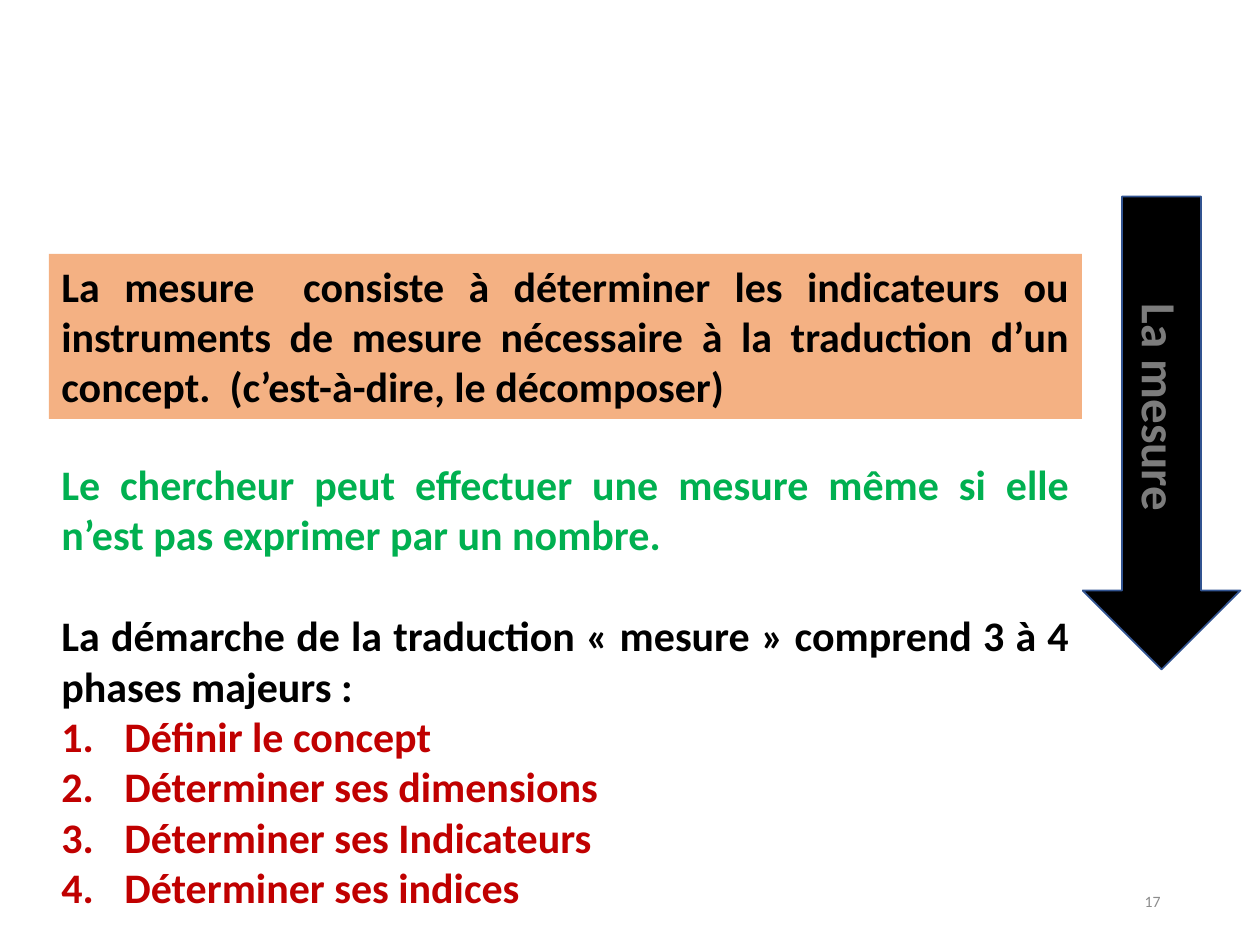
from dataclasses import dataclass

import pptx
import pptx.dml.color
import pptx.enum.shapes
import pptx.enum.text
import pptx.oxml.ns
import pptx.util
from lxml import etree

PX_PER_INCH = 126
FONT = "Calibri"
COLORS = {
    "black": "000000",
    "white": "FFFFFF",
    "peach": "F4B183",
    "green": "00B050",
    "red": "C00000",
    "blue": "325491",
    "label_gray": "7C7C7C",
    "number_gray": "8C8C8C",
}
ALIGN = pptx.enum.text.PP_ALIGN
ANCHOR = pptx.enum.text.MSO_ANCHOR
SHAPE = pptx.enum.shapes.MSO_SHAPE


@dataclass(frozen=True)
class Line:
    text: str
    color: str
    size: int = 24
    align: ALIGN = ALIGN.JUSTIFY
    bold: bool = True
    before: float = 0
    numbered: bool = False


@dataclass(frozen=True)
class Block:
    left: int
    top: int
    width: int
    height: int
    lines: tuple[Line, ...]
    fill: str | None = None
    border: str | None = None
    preset: SHAPE = SHAPE.RECTANGLE
    rotation: int = 0
    anchor: ANCHOR = ANCHOR.TOP


def px(length: int) -> pptx.util.Emu:
    return pptx.util.Emu(round(length * pptx.util.Inches(1) / PX_PER_INCH))


def rgb(name: str) -> pptx.dml.color.RGBColor:
    return pptx.dml.color.RGBColor.from_string(COLORS[name])


def write_line(paragraph, line: Line) -> None:
    paragraph.alignment = line.align
    if line.before:
        paragraph.space_before = pptx.util.Pt(line.before)
    if line.numbered:
        properties = paragraph._p.get_or_add_pPr()
        properties.set("marL", str(px(63)))
        properties.set("indent", str(-px(63)))
        numbering = etree.SubElement(properties, pptx.oxml.ns.qn("a:buAutoNum"))
        numbering.set("type", "arabicPeriod")
    run = paragraph.add_run()
    run.text = line.text
    run.font.name = FONT
    run.font.size = pptx.util.Pt(line.size)
    run.font.bold = line.bold
    run.font.color.rgb = rgb(line.color)


def draw_block(slide, block: Block) -> None:
    bounds = [px(n) for n in (block.left, block.top, block.width, block.height)]
    if block.fill:
        shape = slide.shapes.add_shape(block.preset, *bounds)
        shape.shadow.inherit = False
        shape.fill.solid()
        shape.fill.fore_color.rgb = rgb(block.fill)
        if block.border:
            shape.line.color.rgb = rgb(block.border)
            shape.line.width = pptx.util.Pt(1)
        else:
            shape.line.fill.background()
    else:
        shape = slide.shapes.add_textbox(*bounds)
    shape.rotation = block.rotation
    frame = shape.text_frame
    frame.word_wrap = True
    frame.vertical_anchor = block.anchor
    for index, line in enumerate(block.lines):
        paragraph = frame.add_paragraph() if index else frame.paragraphs[0]
        write_line(paragraph, line)


PHASES = (
    "Définir le concept",
    "Déterminer ses dimensions",
    "Déterminer ses Indicateurs",
    "Déterminer ses indices",
)

page_number = Block(
    890, 876, 283, 50,
    (Line("17", "number_gray", 9, ALIGN.RIGHT, bold=False),),
    anchor=ANCHOR.MIDDLE,
)
measure_arrow = Block(
    925, 354, 473, 158,
    (Line("La mesure ", "label_gray", 28, ALIGN.CENTER),),
    "black", "blue", SHAPE.RIGHT_ARROW, 90, ANCHOR.MIDDLE,
)
definition = Block(
    49, 254, 1033, 165,
    (Line(
        "La mesure  consiste à déterminer les indicateurs ou instruments de "
        "mesure nécessaire à la traduction d’un concept.  "
        "(c’est-à-dire, le décomposer)",
        "black",
    ),),
    "peach",
)
approach = Block(
    49, 452, 1033, 471,
    (
        Line(
            "Le chercheur peut effectuer une mesure même si elle n’est pas "
            "exprimer par un nombre.",
            "green",
        ),
        Line(
            "La démarche de la traduction « mesure » comprend 3 à 4 phases majeurs :",
            "black",
            before=29,
        ),
        *(Line(phase, "red", numbered=True) for phase in PHASES),
    ),
    "white",
)


def main() -> None:
    deck = pptx.Presentation()
    deck.slide_width = px(1260)
    deck.slide_height = px(945)
    slide = deck.slides.add_slide(deck.slide_layouts[6])
    for block in (page_number, measure_arrow, definition, approach):
        draw_block(slide, block)
    deck.save("out.pptx")


if __name__ == "__main__":
    main()
